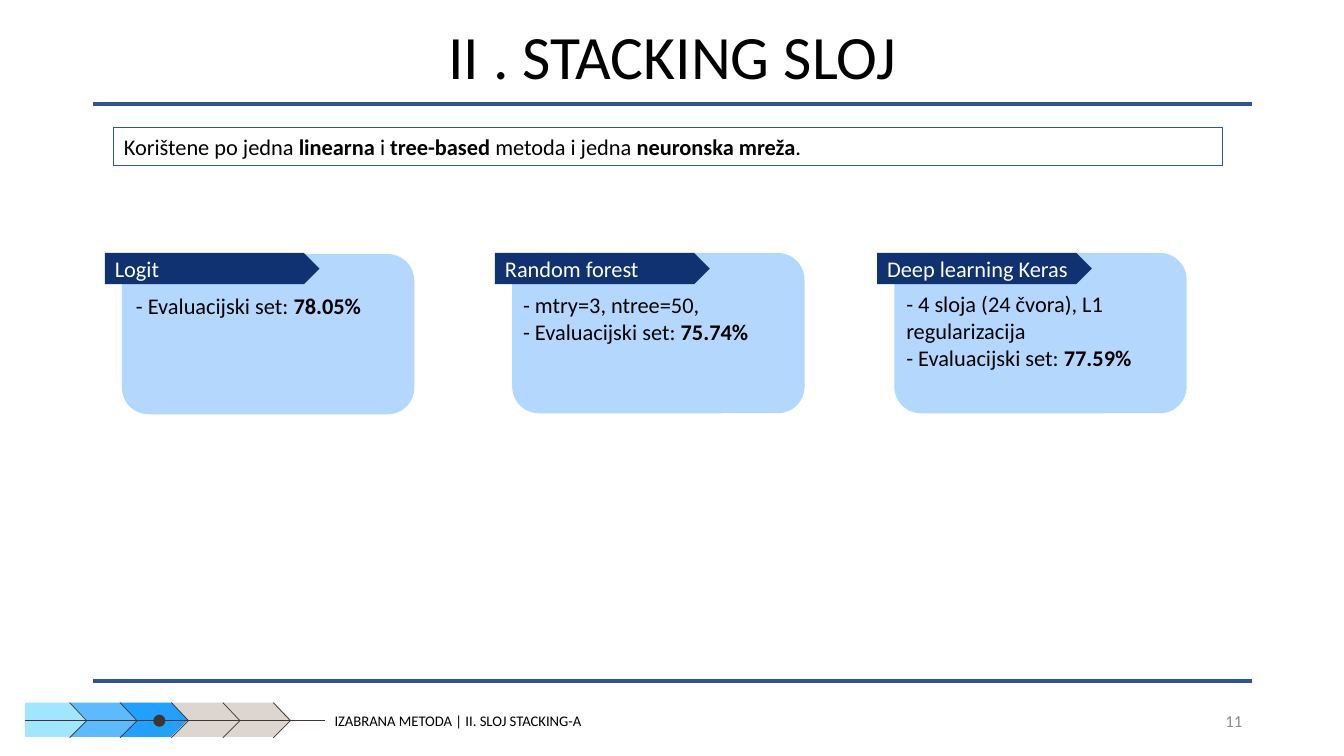
from lxml import etree
from pptx import Presentation
from pptx.dml.color import RGBColor
from pptx.enum.shapes import MSO_CONNECTOR, MSO_SHAPE
from pptx.enum.text import MSO_ANCHOR, MSO_AUTO_SIZE, PP_ALIGN
from pptx.oxml.ns import qn
from pptx.util import Emu, Pt

PX = 9144  # EMU per px, 100 px to the inch
FONT = "Calibri"
BLACK = RGBColor(0x00, 0x00, 0x00)
WHITE = RGBColor(0xFF, 0xFF, 0xFF)
GREY = RGBColor(0x8C, 0x8C, 0x8C)
RULE = RGBColor(0x2F, 0x55, 0x97)
NAVY = RGBColor(0x10, 0x32, 0x71)
PALE = RGBColor(0xB4, 0xD7, 0xFE)
CYAN = RGBColor(0x43, 0xCE, 0xFF)
SKY = RGBColor(0x5D, 0xBA, 0xFF)
BLUE = RGBColor(0x21, 0xA0, 0xFF)
STONE = RGBColor(0xDC, 0xD5, 0xD0)
BROWN = RGBColor(0x41, 0x34, 0x2F)

RECT, ROUND = MSO_SHAPE.RECTANGLE, MSO_SHAPE.ROUNDED_RECTANGLE
PLATE, CHEVRON, OVAL = MSO_SHAPE.PENTAGON, MSO_SHAPE.CHEVRON, MSO_SHAPE.OVAL
STRAIGHT = MSO_CONNECTOR.STRAIGHT
LEFT, CENTER, RIGHT = PP_ALIGN.LEFT, PP_ALIGN.CENTER, PP_ALIGN.RIGHT
TOP, MIDDLE = MSO_ANCHOR.TOP, MSO_ANCHOR.MIDDLE
GROW, FIXED = MSO_AUTO_SIZE.SHAPE_TO_FIT_TEXT, MSO_AUTO_SIZE.NONE


class Deck:
    def __init__(self, width, height):
        self.prs = Presentation()
        self.prs.slide_width, self.prs.slide_height = self.emu(width, height)
        self.s = self.prs.slides.add_slide(self.prs.slide_layouts[5])

    def emu(self, *lengths):
        return [Emu(n * PX) for n in lengths]

    def fill_text(self, sp, paragraphs, size=16, color=BLACK, align=LEFT,
                  anchor=TOP, wrap=True, fit=FIXED):
        """Each paragraph is a list of runs, plain and bold in turn."""
        tf = sp.text_frame
        tf.word_wrap, tf.auto_size, tf.vertical_anchor = wrap, fit, anchor
        for i, runs in enumerate(paragraphs):
            p = tf.add_paragraph() if i else tf.paragraphs[0]
            p.alignment = align
            for j, text in enumerate(runs):
                r = p.add_run()
                r.text = text
                r.font.name, r.font.size = FONT, Pt(size)
                r.font.bold = j % 2 == 1
                r.font.color.rgb = color

    def title(self, box, text):
        sp = self.s.shapes.title
        sp.left, sp.top, sp.width, sp.height = self.emu(*box)
        self.fill_text(sp, [[text]], 44, align=CENTER, anchor=MIDDLE)
        sp.text_frame.paragraphs[0].line_spacing = 0.9

    def text(self, box, paragraphs, **style):
        sp = self.s.shapes.add_textbox(*self.emu(*box))
        self.fill_text(sp, paragraphs, **style)

    def shape(self, kind, box, fill=None, line=None, alpha=None):
        sp = self.s.shapes.add_shape(kind, *self.emu(*box))
        sp.shadow.inherit = False
        if fill is None:
            sp.fill.background()
        else:
            sp.fill.solid()
            sp.fill.fore_color.rgb = fill
        if line is None:
            sp.line.fill.background()
        else:
            sp.line.color.rgb, sp.line.width = line, Pt(0.75)
        if alpha is not None:
            color = sp._element.spPr.find(qn("a:solidFill")).find(qn("a:srgbClr"))
            etree.SubElement(color, qn("a:alpha"), val=str(alpha * 1000))
        return sp

    def line(self, x1, y1, x2, y2, color, width):
        c = self.s.shapes.add_connector(STRAIGHT, *self.emu(x1, y1, x2, y2))
        c.line.color.rgb, c.line.width = color, Pt(width)
        etree.SubElement(c._element.spPr, qn("a:effectLst"))


def main():
    deck = Deck(1333, 750)

    # Title and rules
    for y in (103, 676):
        deck.line(92, y, 1242, y, RULE, 3)
    deck.title((92, 15, 1150, 88), "II . STACKING SLOJ")

    # Progress arrows
    top, mid, bottom = 697, 715, 732
    edges = (69, 119, 170, 221, 271)
    deck.shape(PLATE, (25, top, 61, 34), CYAN, alpha=50)
    for x, color in zip(edges, (SKY, BLUE, STONE, STONE)):
        deck.shape(CHEVRON, (x, top, 68, 34), color)
    for x in edges:
        deck.line(x, top, x + 17, mid, BROWN, 0.5)
        deck.line(x + 17, mid, x, bottom, BROWN, 0.5)
    deck.line(25, mid, 322, mid, BROWN, 0.5)
    deck.shape(OVAL, (152, 709, 12, 12), BROWN)

    # Footer
    deck.text((322, 701, 307, 45), [["IZABRANA METODA | II. SLOJ STACKING-A"]],
              size=10.5)
    deck.text((942, 695, 300, 40), [["11"]], size=12, color=GREY,
              align=RIGHT, anchor=MIDDLE)

    # Summary box
    summary = deck.shape(RECT, (113, 127, 1100, 37), line=RULE)
    deck.fill_text(summary, [["Korištene po jedna ", "linearna", " i ",
                              "tree-based", " metoda i jedna ",
                              "neuronska mreža", "."]], fit=GROW)

    # Method cards: left, card top, name, text box, wrap, details
    score = "- Evaluacijski set: "
    cards = (
        (104, 252, "Logit", (125, 285, 246, 37), False, [[score, "78.05%"]]),
        (491, 251, "Random forest", (509, 284, 246, 64), False,
         [["- mtry=3, ntree=50,"], [score, "75.74%"]]),
        (870, 251, "Deep learning Keras", (889, 283, 292, 91), True,
         [["- 4 sloja (24 čvora), L1 regularizacija"], [score, "77.59%"]]),
    )
    for x, y, name, box, wrap, details in cards:
        deck.shape(ROUND, (x + 17, y, 290, 159), PALE)
        label = deck.shape(PLATE, (x, 251, 213, 31), NAVY)
        deck.fill_text(label, [[name]], color=WHITE, anchor=MIDDLE)
        deck.text(box, details, wrap=wrap, fit=GROW)

    deck.prs.save("out.pptx")


if __name__ == "__main__":
    main()
